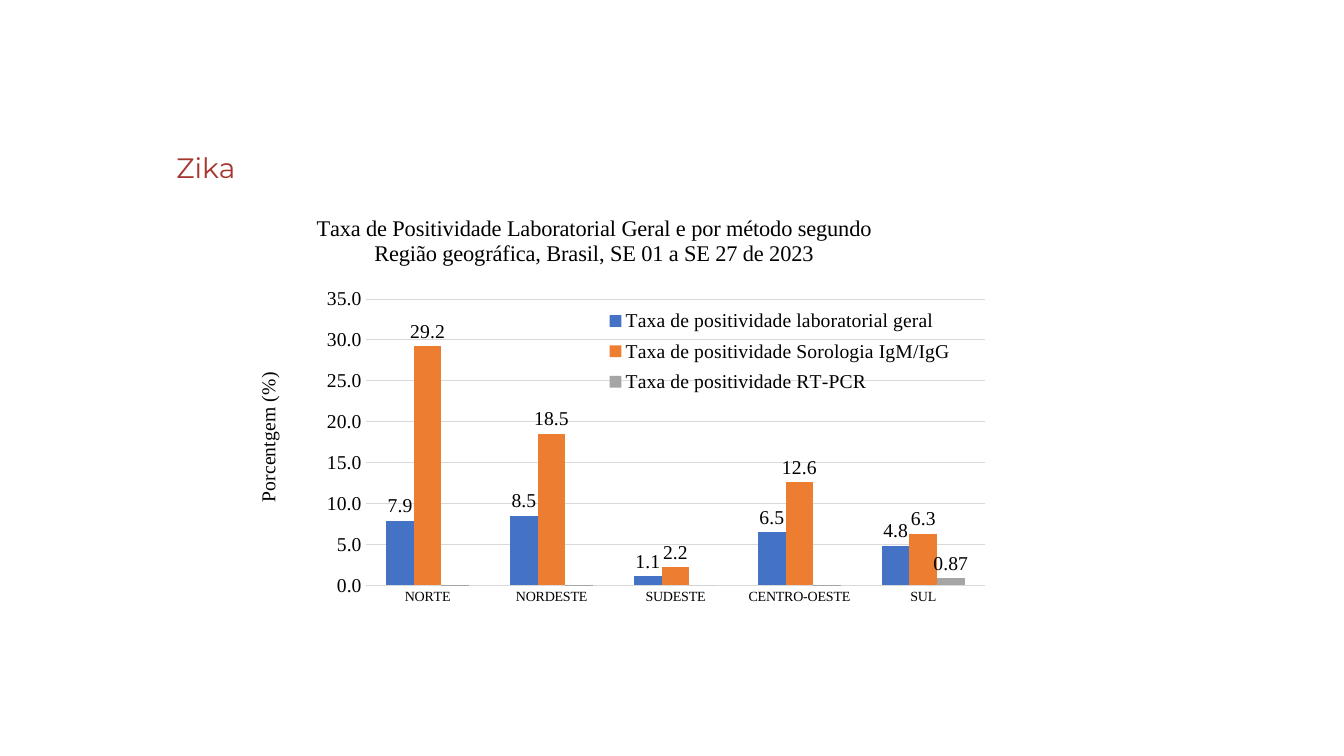
from dataclasses import dataclass
from typing import Optional

from lxml import etree
from pptx import Presentation
from pptx.chart.data import CategoryChartData
from pptx.dml.color import RGBColor
from pptx.enum.chart import XL_CHART_TYPE, XL_LABEL_POSITION, XL_LEGEND_POSITION, XL_TICK_MARK
from pptx.enum.text import MSO_ANCHOR, PP_ALIGN
from pptx.oxml.ns import qn
from pptx.util import Inches, Pt

CLUSTERED = XL_CHART_TYPE.COLUMN_CLUSTERED
OUTSIDE_END = XL_LABEL_POSITION.OUTSIDE_END
LEGEND_RIGHT = XL_LEGEND_POSITION.RIGHT
NO_TICK = XL_TICK_MARK.NONE
TOP = MSO_ANCHOR.TOP
LEFT = PP_ALIGN.LEFT


@dataclass(frozen=True)
class Theme:
    heading_font: str = "Montserrat"
    chart_font: str = "Times New Roman"
    heading_color: str = "A6362E"
    text_color: str = "000000"
    grid_color: str = "D9D9D9"
    heading_size: int = 20
    chart_title_size: int = 16
    chart_size: int = 14
    region_size: int = 10


@dataclass(frozen=True)
class Rate:
    name: str
    values: tuple[float, ...]
    color: str
    number_format: str = "0.0"
    labelled_point: Optional[int] = None


THEME = Theme()
REGIONS = ("NORTE", "NORDESTE", "SUDESTE", "CENTRO-OESTE", "SUL")
RATES = (
    Rate("Taxa de positividade laboratorial geral", (7.9, 8.5, 1.1, 6.5, 4.8), "4472C4"),
    Rate("Taxa de positividade Sorologia IgM/IgG", (29.2, 18.5, 2.2, 12.6, 6.3), "ED7D31"),
    Rate("Taxa de positividade RT-PCR", (0.03, 0.01, 0, 0.03, 0.87), "A5A5A5", "0.00", 4),
)


def style_font(font, size: int, face: str = THEME.chart_font, color: str = THEME.text_color) -> None:
    font.name = face
    font.size = Pt(size)
    font.bold = False
    font.color.rgb = RGBColor.from_string(color)


def style_line(line) -> None:
    line.color.rgb = RGBColor.from_string(THEME.grid_color)
    line.width = Pt(0.75)


def place(element, index: int, **fractions: float) -> None:
    for previous in element.findall(qn("c:layout")):
        element.remove(previous)
    layout = etree.Element(qn("c:layout"))
    manual = etree.SubElement(layout, qn("c:manualLayout"))
    if index == 0:
        etree.SubElement(manual, qn("c:layoutTarget"), val="inner")
    for axis in ("x", "y"):
        etree.SubElement(manual, qn(f"c:{axis}Mode"), val="edge")
    for key, fraction in fractions.items():
        etree.SubElement(manual, qn(f"c:{key}"), val=str(fraction))
    element.insert(index, layout)


def write_title(owner, text: str, size: int, x: float, y: float):
    owner.has_title = True
    title = owner.axis_title if hasattr(owner, "axis_title") else owner.chart_title
    run = title.text_frame.paragraphs[0].add_run()
    run.text = text
    style_font(run.font, size)
    place(title._element, 1, x=x, y=y)
    return title


def style_rate(series, rate: Rate) -> None:
    series.format.fill.solid()
    series.format.fill.fore_color.rgb = RGBColor.from_string(rate.color)
    series.invert_if_negative = False
    if rate.labelled_point is None:
        labels = series.data_labels
        labels.show_value = True
        labels.number_format = rate.number_format
        labels.number_format_is_linked = False
        labels.position = OUTSIDE_END
        style_font(labels.font, THEME.chart_size)
    else:
        label = series.points[rate.labelled_point].data_label
        style_font(label.font, THEME.chart_size)
        label.position = OUTSIDE_END
        series.data_labels.show_value = False


def add_heading(slide) -> None:
    heading = slide.shapes.title
    heading.left, heading.top = Inches(1.65), Inches(1.39)
    heading.width, heading.height = Inches(1.03), Inches(0.54)
    frame = heading.text_frame
    frame.margin_left = frame.margin_right = Inches(0.1)
    frame.margin_top = frame.margin_bottom = Inches(0.1)
    frame.vertical_anchor = TOP
    frame.word_wrap = True
    frame.paragraphs[0].alignment = LEFT
    run = frame.paragraphs[0].add_run()
    run.text = "Zika"
    style_font(run.font, THEME.heading_size, THEME.heading_font, THEME.heading_color)


def add_positivity_chart(slide) -> None:
    data = CategoryChartData()
    data.categories = REGIONS
    for rate in RATES:
        data.add_series(rate.name, rate.values, rate.number_format)
    chart = slide.shapes.add_chart(
        CLUSTERED, Inches(2.27), Inches(1.93), Inches(7.54), Inches(4.94), data
    ).chart
    style_font(chart.font, THEME.chart_size)

    write_title(
        chart,
        "Taxa de Positividade Laboratorial Geral e por método segundo "
        "Região geográfica, Brasil, SE 01 a SE 27 de 2023",
        THEME.chart_title_size, 0.11, 0.03,
    )
    plot = chart.plots[0]
    plot.gap_width = 150
    plot.overlap = 0
    plot.vary_by_categories = False
    for series, rate in zip(plot.series, RATES):
        style_rate(series, rate)
    place(chart._chartSpace.chart.plotArea, 0, x=0.18, y=0.21, w=0.815, h=0.575)

    regions = chart.category_axis
    regions.major_tick_mark = regions.minor_tick_mark = NO_TICK
    style_font(regions.tick_labels.font, THEME.region_size)
    style_line(regions.format.line)

    percent = chart.value_axis
    percent.minimum_scale, percent.maximum_scale, percent.major_unit = 0, 35, 5
    percent.major_tick_mark = percent.minor_tick_mark = NO_TICK
    percent.tick_labels.number_format = "0.0"
    percent.tick_labels.number_format_is_linked = False
    style_font(percent.tick_labels.font, THEME.chart_size)
    percent.format.line.fill.background()
    style_line(percent.major_gridlines.format.line)
    percent_title = write_title(percent, "Porcentgem (%)", THEME.chart_size, 0.03, 0.35)
    body = percent_title._element.find(".//" + qn("a:bodyPr"))
    body.set("rot", "-5400000")
    body.set("vert", "horz")

    chart.has_legend = True
    chart.legend.position = LEGEND_RIGHT
    chart.legend.include_in_layout = True
    style_font(chart.legend.font, THEME.chart_size)
    place(chart.legend._element, 1, x=0.49, y=0.215, w=0.47, h=0.2)


def main() -> None:
    deck = Presentation()
    deck.slide_width, deck.slide_height = Inches(13.33), Inches(7.5)
    slide = deck.slides.add_slide(deck.slide_layouts[5])
    add_heading(slide)
    add_positivity_chart(slide)
    deck.save("out.pptx")


if __name__ == "__main__":
    main()
